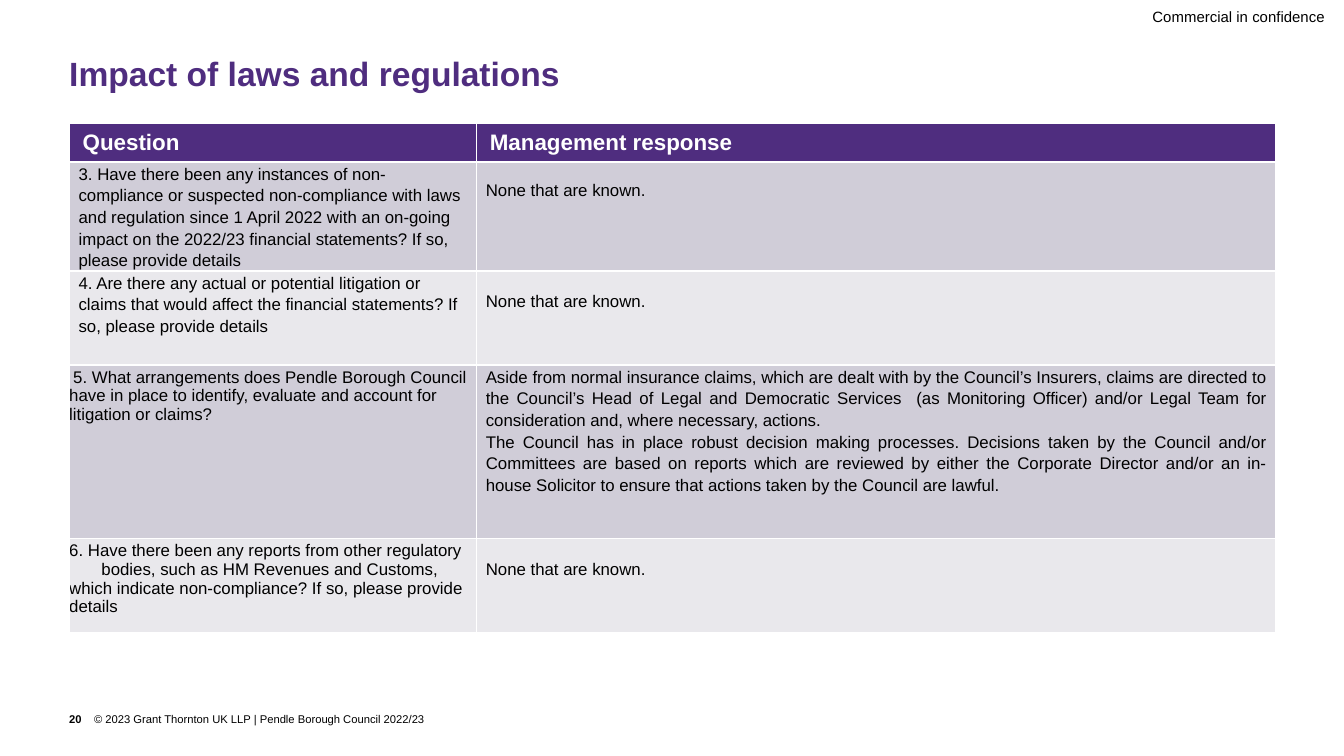
from dataclasses import dataclass

from pptx import Presentation
from pptx.dml.color import RGBColor
from pptx.enum.text import MSO_ANCHOR, MSO_AUTO_SIZE, PP_ALIGN
from pptx.util import Pt

EMU_PER_PX = 4572  # 200 px to the inch
TITLE_ONLY = 5
LEFT, RIGHT, JUSTIFY = PP_ALIGN.LEFT, PP_ALIGN.RIGHT, PP_ALIGN.JUSTIFY
TOP, MIDDLE = MSO_ANCHOR.TOP, MSO_ANCHOR.MIDDLE


@dataclass(frozen=True)
class Theme:
    font: str = "Arial"
    purple: str = "4F2D7F"
    dark_band: str = "D0CDD8"
    light_band: str = "E9E8EC"
    white: str = "FFFFFF"
    black: str = "000000"
    title: int = 18
    header: int = 12
    body: int = 9
    label: int = 8
    footer: int = 6


@dataclass(frozen=True)
class Box:
    left: int
    top: int
    width: int
    height: int


@dataclass(frozen=True)
class CellText:
    """Paragraphs of a cell with their format; indents are one per paragraph."""
    paragraphs: tuple[str, ...]
    margins: tuple[int, int, int, int] = (14, 0, 14, 0)
    spacing: float = 1.15
    align: PP_ALIGN = LEFT
    indents: tuple[int, ...] = ()


@dataclass(frozen=True)
class Row:
    height: int
    question: CellText
    response: CellText


THEME = Theme()
FLUSH = (0, 4, 0, 4)
LOWERED = (14, 28, 14, 0)
HEADER_MARGINS = (20, 10, 20, 10)
HEADER_HEIGHT = 55
COLUMN_WIDTHS = (606, 1189)
TABLE_LEFT, TABLE_TOP = 103, 184
HEADINGS = ("Question", "Management response")
NONE_KNOWN = ("None that are known.",)

ROWS = (
    Row(162,
        CellText(("3. Have there been any instances of non-compliance or suspected "
                  "non-compliance with laws and regulation since 1 April 2022 with an "
                  "on-going impact on the 2022/23 financial statements? If so, please "
                  "provide details",)),
        CellText(NONE_KNOWN, LOWERED, 1.0)),
    Row(140,
        CellText(("4. Are there any actual or potential litigation or claims that would "
                  "affect the financial statements? If so, please provide details",)),
        CellText(NONE_KNOWN, LOWERED, align=JUSTIFY)),
    Row(258,
        CellText(("5. What arrangements does Pendle Borough Council have in place to "
                  "identify, evaluate and account for litigation or claims?",),
                 FLUSH, 1.0, indents=(6,)),
        CellText(("Aside from normal insurance claims, which are dealt with by the "
                  "Council’s Insurers, claims are directed to the Council’s Head of Legal "
                  "and Democratic Services  (as Monitoring Officer) and/or Legal Team for "
                  "consideration and, where necessary, actions.",
                  "The Council has in place robust decision making processes. Decisions "
                  "taken by the Council and/or Committees are based on reports which are "
                  "reviewed by either the Corporate Director and/or an in-house Solicitor "
                  "to ensure that actions taken by the Council are lawful."),
                 align=JUSTIFY)),
    Row(140,
        CellText(("6. Have there been any reports from other regulatory",
                  "bodies, such as HM Revenues and Customs, which indicate "
                  "non-compliance? If so, please provide details"),
                 FLUSH, 1.0, indents=(0, 48)),
        CellText(NONE_KNOWN, LOWERED, align=JUSTIFY)),
)


def px(length: int) -> int:
    return length * EMU_PER_PX


def place(shape, box: Box) -> None:
    shape.left, shape.top = px(box.left), px(box.top)
    shape.width, shape.height = px(box.width), px(box.height)


def set_margins(target, margins: tuple[int, int, int, int]) -> None:
    """Set left, top, right and bottom margins of a text frame or cell."""
    target.margin_left, target.margin_top, target.margin_right, target.margin_bottom = map(px, margins)


def write(paragraph, text: str, *, size: int, color: str = THEME.black,
          bold: bool = False, align: PP_ALIGN = LEFT, spacing: float = 1.0,
          indent: int = 0) -> None:
    paragraph.alignment = align
    paragraph.line_spacing = spacing
    paragraph.space_before = paragraph.space_after = Pt(0)
    if indent:
        paragraph._p.get_or_add_pPr().set("indent", str(px(indent)))
    run = paragraph.add_run()
    run.text = text
    run.font.name = THEME.font
    run.font.size = Pt(size)
    run.font.bold = bold
    run.font.color.rgb = RGBColor.from_string(color)


def fill_text_shape(shape, box: Box, text: str, *, anchor: MSO_ANCHOR = TOP,
                    right_margin: int = 0, **text_format) -> None:
    place(shape, box)
    frame = shape.text_frame
    frame.word_wrap = True
    frame.auto_size = MSO_AUTO_SIZE.NONE
    frame.vertical_anchor = anchor
    set_margins(frame, (0, 0, right_margin, 0))
    write(frame.paragraphs[0], text, **text_format)


def add_label(slide, box: Box, text: str, **options) -> None:
    fill_text_shape(slide.shapes.add_textbox(0, 0, 0, 0), box, text, **options)


def fill_cell(cell, content: CellText, fill: str, **text_format) -> None:
    cell.fill.solid()
    cell.fill.fore_color.rgb = RGBColor.from_string(fill)
    cell.vertical_anchor = TOP
    set_margins(cell, content.margins)
    frame = cell.text_frame
    for index, text in enumerate(content.paragraphs):
        paragraph = frame.add_paragraph() if index else frame.paragraphs[0]
        indent = content.indents[index] if content.indents else 0
        write(paragraph, text, align=content.align, spacing=content.spacing,
              indent=indent, **text_format)


def add_question_table(slide) -> None:
    """Add the table; its default style supplies the white borders."""
    heights = (HEADER_HEIGHT, *(row.height for row in ROWS))
    table = slide.shapes.add_table(
        len(heights), len(COLUMN_WIDTHS), px(TABLE_LEFT), px(TABLE_TOP),
        px(sum(COLUMN_WIDTHS)), px(sum(heights))).table
    for column, width in zip(table.columns, COLUMN_WIDTHS):
        column.width = px(width)
    for table_row, height in zip(table.rows, heights):
        table_row.height = px(height)
    for column, heading in enumerate(HEADINGS):
        fill_cell(table.cell(0, column), CellText((heading,), HEADER_MARGINS, 1.0),
                  THEME.purple, size=THEME.header, color=THEME.white, bold=True)
    for number, row in enumerate(ROWS, start=1):
        band = THEME.dark_band if number % 2 else THEME.light_band
        for column, content in enumerate((row.question, row.response)):
            fill_cell(table.cell(number, column), content, band, size=THEME.body)


def main() -> None:
    presentation = Presentation()
    presentation.slide_width, presentation.slide_height = px(2000), px(1125)
    slide = presentation.slides.add_slide(presentation.slide_layouts[TITLE_ONLY])
    add_label(slide, Box(140, 1060, 862, 20),
              "© 2023 Grant Thornton UK LLP | Pendle Borough Council 2022/23",
              size=THEME.footer)
    add_label(slide, Box(1688, 0, 312, 48), "Commercial in confidence",
              anchor=MIDDLE, right_margin=28, size=THEME.label, align=RIGHT)
    fill_text_shape(slide.shapes.title, Box(103, 86, 1795, 174),
                    "Impact of laws and regulations", size=THEME.title,
                    color=THEME.purple, bold=True, spacing=0.9)
    add_question_table(slide)
    add_label(slide, Box(103, 1060, 36, 20), "20", size=THEME.footer, bold=True)
    presentation.save("out.pptx")


if __name__ == "__main__":
    main()
